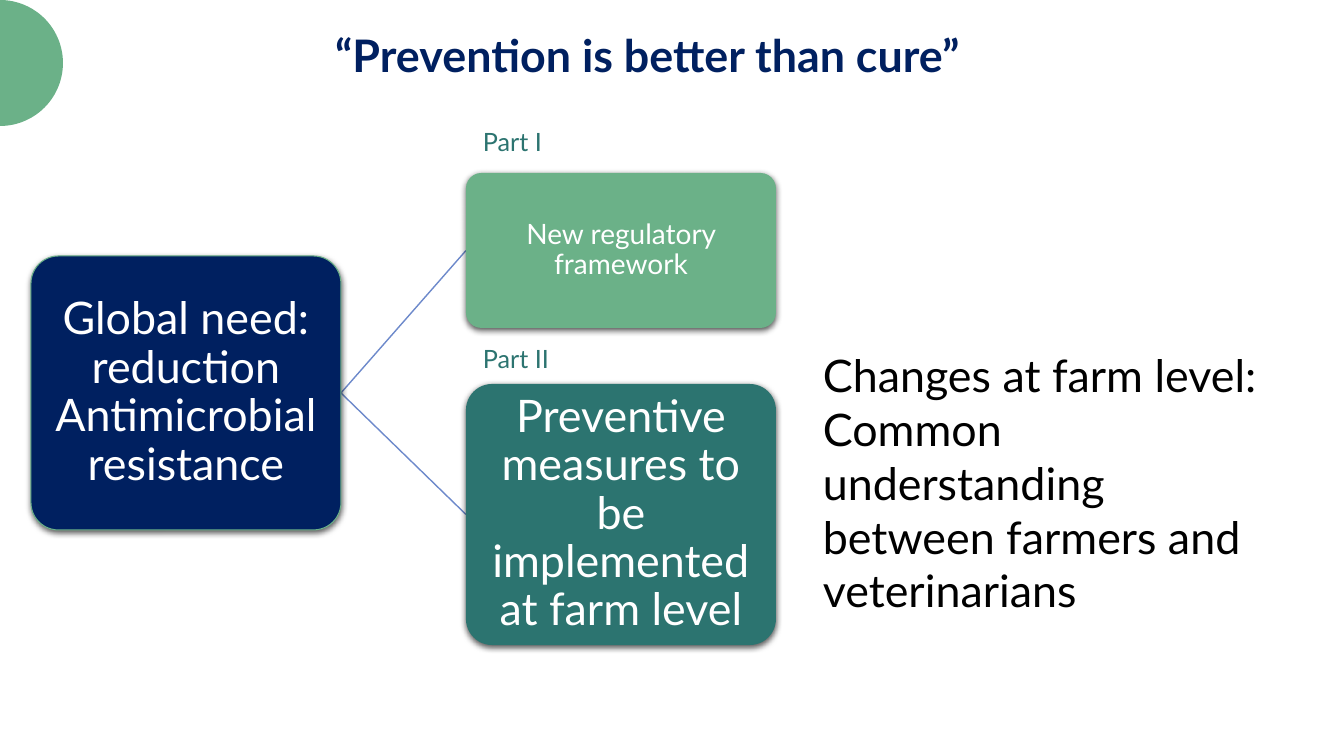
import math
from dataclasses import dataclass

from lxml import etree
from pptx import Presentation
from pptx import util as u
from pptx.dml.color import RGBColor
from pptx.enum import shapes, text
from pptx.oxml import ns

PX = 914400 / 100.8


@dataclass(frozen=True)
class Theme:
    font: str = "Lato"
    navy: str = "002060"
    green: str = "6BB188"
    teal: str = "2C7470"
    link: str = "6D89CB"
    white: str = "FFFFFF"
    black: str = "000000"
    large: int = 32
    medium: int = 20
    small: int = 18


THEME = Theme()


def px(length):
    return u.Emu(round(length * PX))


def rgb(value):
    return RGBColor.from_string(value)


def write(frame, words, size, color, align, bold=False):
    frame.word_wrap = True
    paragraph = frame.paragraphs[0]
    paragraph.text = words
    paragraph.alignment = align
    font = paragraph.font
    font.name, font.size, font.bold = THEME.font, u.Pt(size), bold
    font.color.rgb = rgb(color)
    return paragraph


def add_shadow(shape):
    effects = shape._element.spPr.find(ns.qn("a:effectLst"))
    shadow = etree.SubElement(effects, ns.qn("a:outerShdw"), blurRad="57150", dist="19050",
                              dir="5400000", algn="ctr", rotWithShape="0")
    color = etree.SubElement(shadow, ns.qn("a:srgbClr"), val=THEME.black)
    etree.SubElement(color, ns.qn("a:alpha"), val="63000")


def add_card(slide, box, words, size, fill, outline=None):
    card = slide.shapes.add_shape(shapes.MSO_SHAPE.ROUNDED_RECTANGLE, *map(px, box))
    card.adjustments[0] = 0.1
    card.shadow.inherit = False
    card.fill.solid()
    card.fill.fore_color.rgb = rgb(fill)
    if outline:
        card.line.color.rgb = rgb(outline)
        card.line.width = u.Pt(0.75)
    else:
        card.line.fill.background()
    add_shadow(card)
    frame = card.text_frame
    frame.margin_left = frame.margin_right = frame.margin_top = frame.margin_bottom = px(2)
    frame.vertical_anchor = text.MSO_ANCHOR.MIDDLE
    paragraph = write(frame, words, size, THEME.white, text.PP_ALIGN.CENTER)
    paragraph.line_spacing = 0.9


def add_label(slide, box, words, size, color, align=text.PP_ALIGN.LEFT, bold=False):
    label = slide.shapes.add_textbox(*map(px, box))
    write(label.text_frame, words, size, color, align, bold)
    label.text_frame.auto_size = text.MSO_AUTO_SIZE.SHAPE_TO_FIT_TEXT


def add_link(slide, source, target):
    """Join the right edge of one box to the left edge of another."""
    ends = (source[0] + source[2], source[1] + source[3] / 2, target[0], target[1] + target[3] / 2)
    link = slide.shapes.add_connector(shapes.MSO_CONNECTOR.STRAIGHT, *map(px, ends))
    link.line.color.rgb = rgb(THEME.link)
    link.line.width = u.Pt(1)
    etree.SubElement(link._element.spPr, ns.qn("a:effectLst"))


def add_half_disc(slide, radius, steps=60):
    angles = [math.pi * (step / steps - 0.5) for step in range(steps + 1)]
    points = [(px(radius * math.cos(angle)), px(radius * (1 + math.sin(angle)))) for angle in angles]
    builder = slide.shapes.build_freeform(*points[0])
    builder.add_line_segments(points[1:], close=True)
    disc = builder.convert_to_shape()
    disc.shadow.inherit = False
    disc.fill.solid()
    disc.fill.fore_color.rgb = rgb(THEME.green)
    disc.line.fill.background()


def main():
    presentation = Presentation()
    presentation.slide_width, presentation.slide_height = px(1344), px(756)
    slide = presentation.slides.add_slide(presentation.slide_layouts[6])
    need = (31, 256, 310, 274)
    framework = (466, 173, 310, 155)
    measures = (466, 384, 310, 261)

    add_half_disc(slide, 63)
    for target in (framework, measures):
        add_link(slide, need, target)
    add_card(slide, need, "Global need: reduction Antimicrobial resistance",
             THEME.large, THEME.navy, THEME.green)
    add_card(slide, framework, "New regulatory framework", THEME.medium, THEME.green)
    add_card(slide, measures, "Preventive measures to be implemented at farm level",
             THEME.large, THEME.teal)

    add_label(slide, (17, 23, 1261, 65), "“Prevention is better than cure”",
              THEME.large, THEME.navy, text.PP_ALIGN.CENTER, True)
    for top, words in ((121, "Part I"), (338, "Part II")):
        add_label(slide, (473, top, 109, 40), words, THEME.small, THEME.teal)
    add_label(slide, (813, 343, 466, 228),
              "Changes at farm level: Common understanding between farmers and veterinarians",
              THEME.large, THEME.black)
    presentation.save("out.pptx")


if __name__ == "__main__":
    main()
